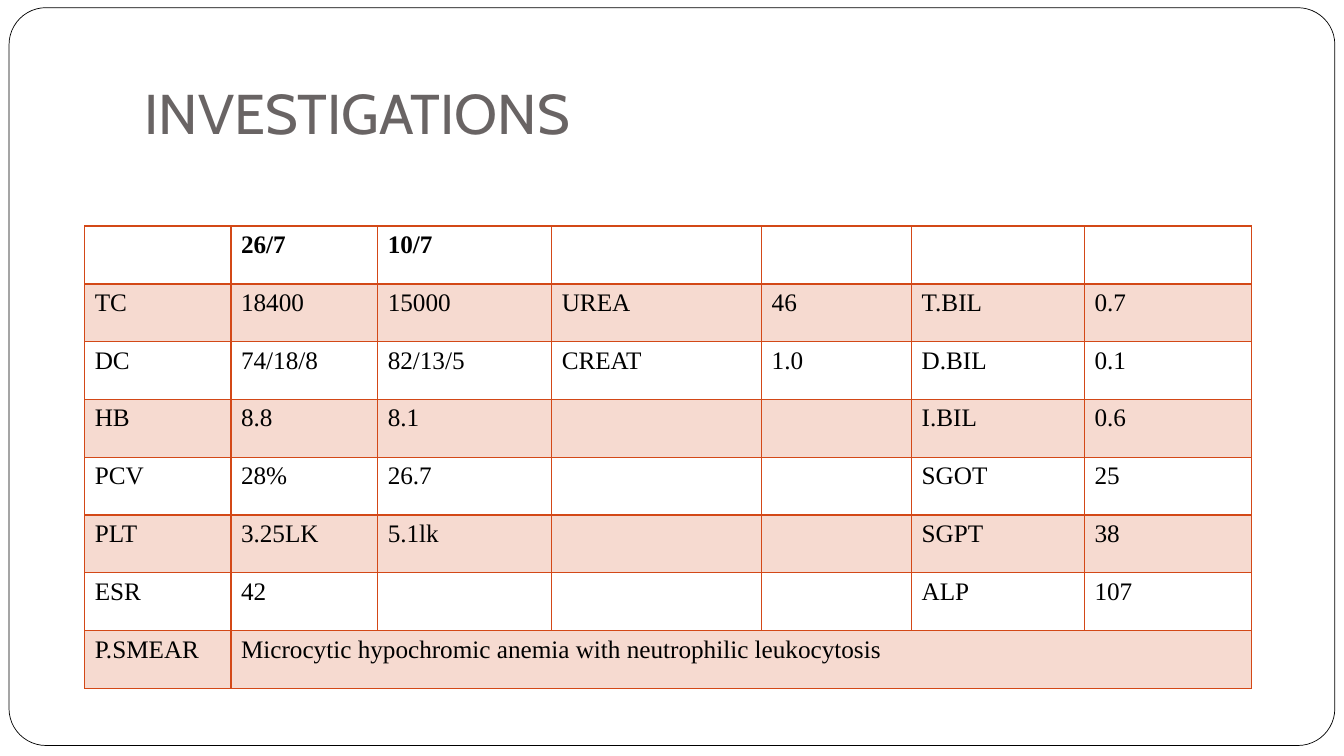
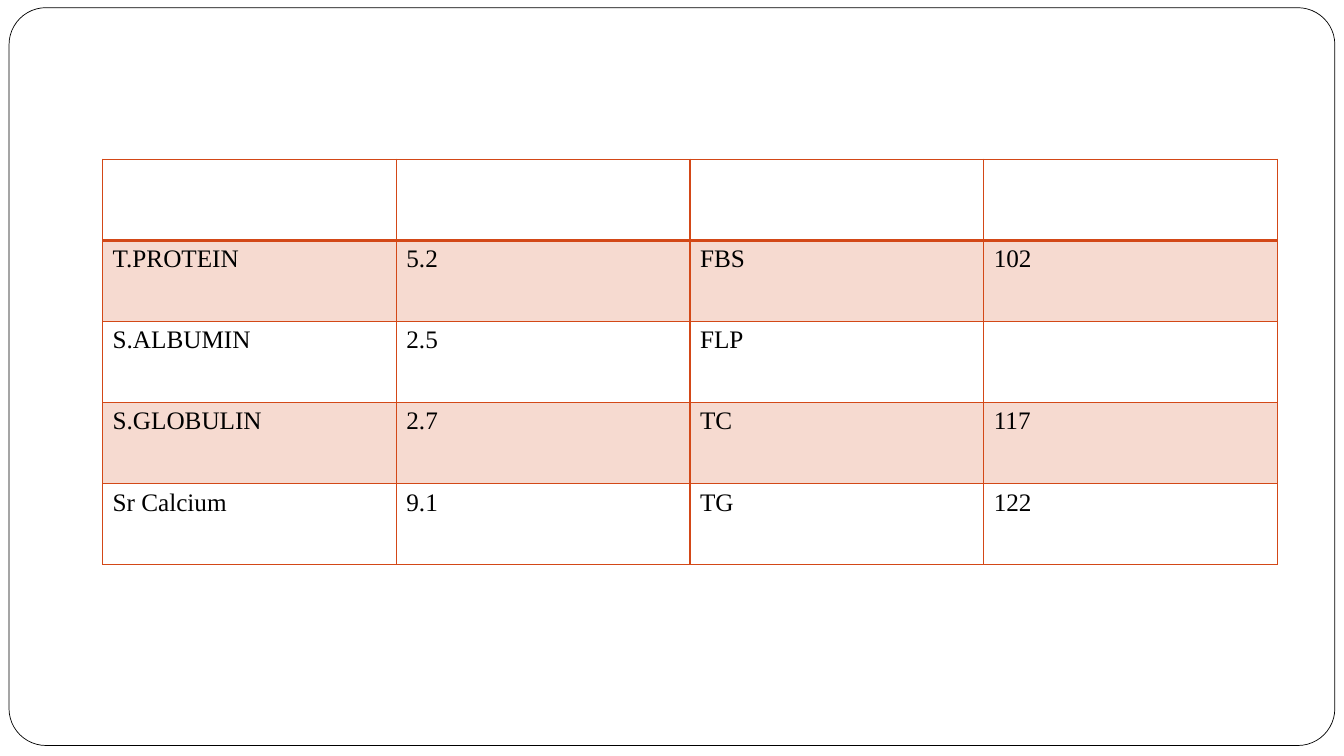
"""Build two slides of laboratory results in ruled tables."""
from dataclasses import dataclass

from lxml import etree
from pptx import Presentation
from pptx.dml.color import RGBColor
from pptx.enum import shapes, text
from pptx.oxml import ns
from pptx.util import Pt

HUES = {"paper": "FFFFFF", "ink": "000000", "title": "696464", "rust": "D34817"}
HEAD, BODY = "Cabin", "Times New Roman"
TINT = 20


@dataclass(frozen=True)
class Grid:
    """Place, sizes and words of one table."""

    left: float
    top: float
    cols: list[float]
    high: float
    rows: list[list[str]]
    wide: tuple[int, ...] = ()


LABS = Grid(60.5, 161.5, [104.5, 104.8, 124.3, 150, 107.1, 123.5, 119.4], 41.3, [
    ["", "26/7", "10/7", "", "", "", ""],
    ["TC", "18400", "15000", "UREA", "46", "T.BIL", "0.7"],
    ["DC", "74/18/8", "82/13/5", "CREAT", "1.0", "D.BIL", "0.1"],
    ["HB", "8.8", "8.1", "", "", "I.BIL", "0.6"],
    ["PCV", "28%", "26.7", "", "", "SGOT", "25"],
    ["PLT", "3.25LK", "5.1lk", "", "", "SGPT", "38"],
    ["ESR", "42", "", "", "", "ALP", "107"],
    ["P.SMEAR", "Microcytic hypochromic anemia with neutrophilic leukocytosis",
     "", "", "", "", ""],
], (7,))

SERUM = Grid(73.3, 113.8, [209.8] * 4, 57.9, [
    ["", "", "", ""],
    ["T.PROTEIN", "5.2", "FBS", "102"],
    ["S.ALBUMIN", "2.5", "FLP", ""],
    ["S.GLOBULIN", "2.7", "TC", "117"],
    ["Sr Calcium", "9.1", "TG", "122"],
])


def hue(name: str) -> RGBColor:
    """Look up a colour."""
    return RGBColor.from_string(HUES[name])


def write(par, words: str, face: str, size: float, tone: str, bold: bool = False) -> None:
    """Add one run to a paragraph."""
    run = par.add_run()
    run.text = words
    font = run.font
    font.name, font.size, font.bold = face, Pt(size), bold
    font.color.rgb = hue(tone)


def rule(cell, side: str, width: float) -> None:
    """Draw one border of a cell."""
    props = cell._tc.get_or_add_tcPr()
    line = etree.SubElement(props, ns.qn(f"a:ln{side}"), w=str(int(Pt(width))))
    fill = etree.SubElement(line, ns.qn("a:solidFill"))
    etree.SubElement(fill, ns.qn("a:srgbClr"), val=HUES["rust"])


def shade(cell) -> None:
    """Fill a cell with a clear tint."""
    cell.fill.solid()
    cell.fill.fore_color.rgb = hue("rust")
    tone = cell._tc.tcPr.find(f"{ns.qn('a:solidFill')}/{ns.qn('a:srgbClr')}")
    etree.SubElement(tone, ns.qn("a:alpha"), val=str(TINT * 1000))


def draw(slide, grid: Grid) -> None:
    """Add a table to a slide."""
    count = len(grid.rows)
    table = slide.shapes.add_table(
        count, len(grid.cols), Pt(grid.left), Pt(grid.top),
        Pt(sum(grid.cols)), Pt(grid.high * count)).table
    table.first_row = table.horz_banding = False
    for col, width in zip(table.columns, grid.cols):
        col.width = Pt(width)
    for y, row in enumerate(grid.rows):
        table.rows[y].height = Pt(grid.high)
        for x, words in enumerate(row):
            cell = table.cell(y, x)
            for side in "LRTB":
                thick = (y, side) in ((0, "B"), (1, "T"))
                rule(cell, side, 2 if thick else 1)
            if y % 2:
                shade(cell)
            else:
                cell.fill.background()
            if words:
                write(cell.text_frame.paragraphs[0], words, BODY, 18, "ink", y == 0)
    for y in grid.wide:
        table.cell(y, 1).merge(table.cell(y, len(grid.cols) - 1))


def frame(deck, slide) -> None:
    """Put the rounded page frame on the master."""
    box = slide.shapes.add_shape(
        shapes.MSO_SHAPE.ROUNDED_RECTANGLE, Pt(6.5), Pt(5.5), Pt(947), Pt(527))
    box.adjustments[0] = 0.05
    box.shadow.inherit = False
    box.fill.solid()
    box.fill.fore_color.rgb = hue("paper")
    box.line.color.rgb = hue("ink")
    box.line.width = Pt(0.5)
    box.element.nvSpPr.cNvPr.set("id", "20")
    deck.slide_master.shapes[0].element.addprevious(box.element)


def head(slide, words: str) -> None:
    """Place and fill the title."""
    title = slide.shapes.title
    title.left, title.top, title.width, title.height = Pt(96), Pt(21.6), Pt(816), Pt(90)
    area = title.text_frame
    area.auto_size = text.MSO_AUTO_SIZE.NONE
    area.word_wrap = True
    area.vertical_anchor = text.MSO_ANCHOR.BOTTOM
    area.margin_left = area.margin_right = area.margin_bottom = Pt(7.2)
    area.margin_top = Pt(3.6)
    par = area.paragraphs[0]
    par.alignment = text.PP_ALIGN.LEFT
    write(par, words, HEAD, 40, "title")


def main() -> None:
    """Build and save the deck."""
    deck = Presentation()
    deck.slide_width, deck.slide_height = Pt(960), Pt(540)
    first = deck.slides.add_slide(deck.slide_layouts.get_by_name("Title Only"))
    frame(deck, first)
    head(first, "INVESTIGATIONS")
    draw(first, LABS)
    draw(deck.slides.add_slide(deck.slide_layouts.get_by_name("Blank")), SERUM)
    deck.save("out.pptx")


if __name__ == "__main__":
    main()
